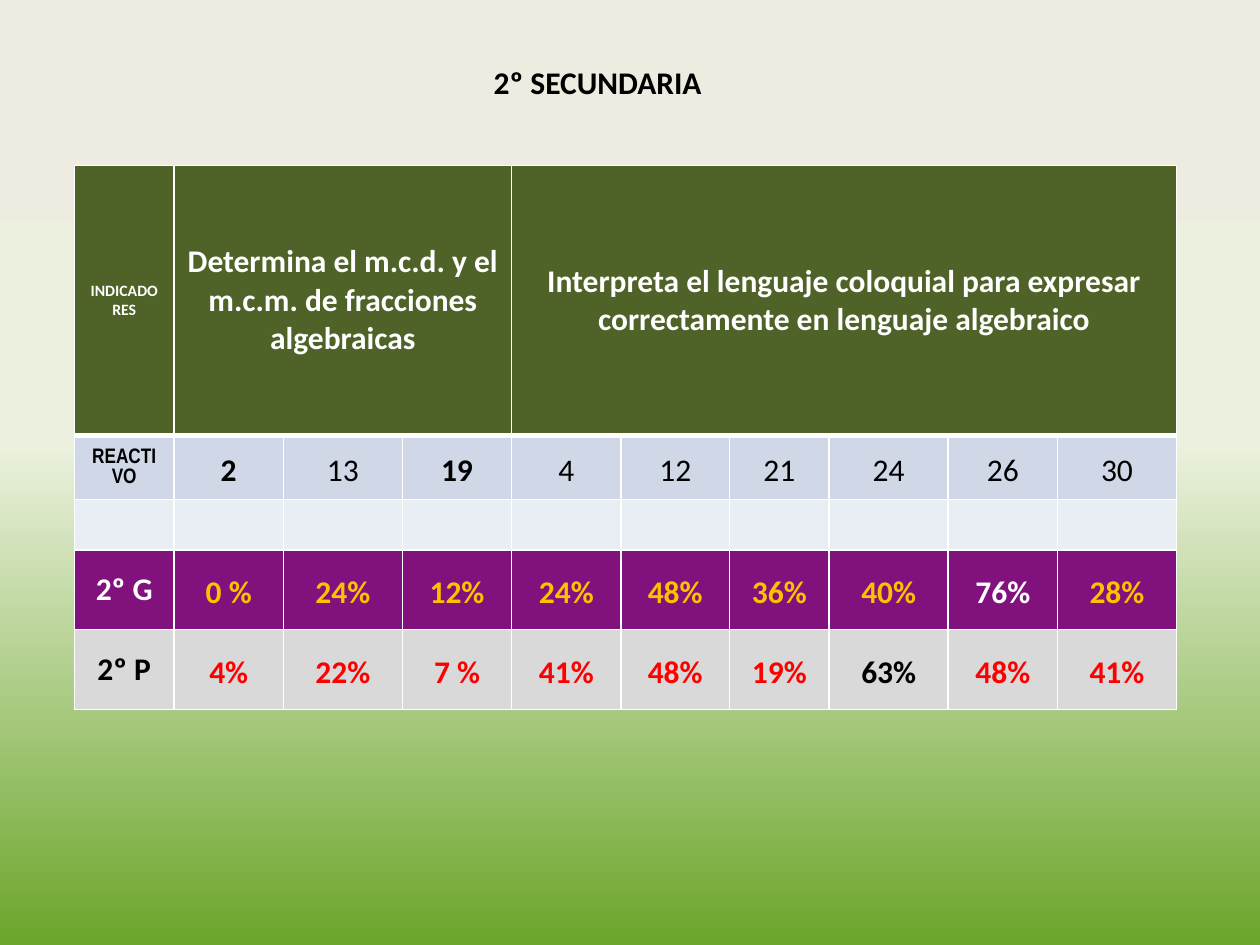
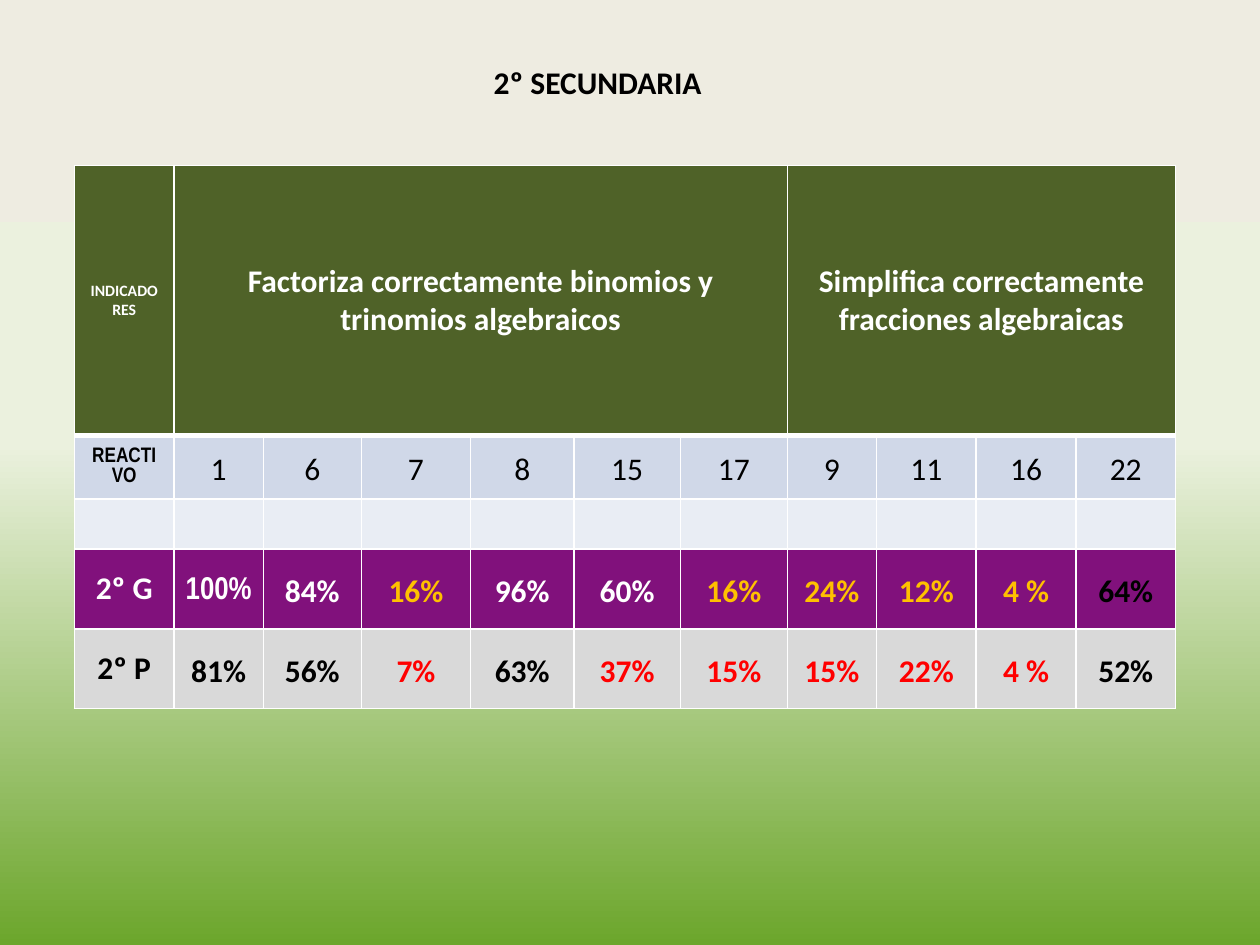
from lxml.etree import SubElement
from pptx import Presentation
from pptx.dml.color import RGBColor
from pptx.enum.text import MSO_ANCHOR, MSO_AUTO_SIZE, PP_ALIGN
from pptx.oxml import parse_xml
from pptx.oxml.ns import qn
from pptx.util import Pt

TITLE = " 2º SECUNDARIA"
LABELS = ["INDICADORES", "REACTIVO", "", "2º G", "2º P"]
SLIDES = [
    {
        "indicators": [
            ("Determina el m.c.d. y el m.c.m. de fracciones algebraicas", 3),
            ("Interpreta el lenguaje coloquial para expresar correctamente "
             "en lenguaje algebraico", 6),
        ],
        "items": ["2", "13", "19", "4", "12", "21", "24", "26", "30"],
        "bold_items": ["2", "19"],
        "group_g": ["0 %", "24%", "12%", "24%", "48%", "36%", "40%", "76%", "28%"],
        "group_p": ["4%", "22%", "7 %", "41%", "48%", "19%", "63%", "48%", "41%"],
        "widths": [57, 62.5, 68, 62.5, 62.5, 62, 57, 68, 62.5, 68],
        "item_height": 36.5,
    },
    {
        "indicators": [
            ("Factoriza correctamente binomios y trinomios algebraicos", 6),
            ("Simplifica correctamente fracciones algebraicas", 4),
        ],
        "items": ["1", "6", "7", "8", "15", "17", "9", "11", "16", "22"],
        "bold_items": [],
        "group_g": ["100%", "84%", "16%", "96%", "60%", "16%", "24%", "12%", "4 %", "64%"],
        "group_p": ["81%", "56%", "7%", "63%", "37%", "15%", "15%", "22%", "4 %", "52%"],
        "widths": [57, 51, 56, 62.5, 59, 61, 61, 51, 57, 57, 57],
        "item_height": 32.5,
    },
]
WHITE, BLACK, RED, AMBER = "FFFFFF", "000000", "FF0000", "FFC000"
ROW_FILLS = ["4F6228", "D0D8E8", "E9EDF4", "81117C", "D9D9D9"]
BACKGROUND_STOPS = [(0, "6CA62C"), (53, "EBF1DE"), (100, "EEECE1")]
TABLE_LEFT, TABLE_TOP = 42.5, 94.5
PASS_MARK = 50
HEADER_ROW, ITEM_ROW, EMPTY_ROW, G_ROW, P_ROW = range(5)


def color(value):
    return RGBColor.from_string(value)


def set_background(master):
    fill = master.background.fill
    fill.gradient()
    fill.gradient_angle = 90
    stops = fill.gradient_stops[0]._gs.getparent()
    for stop in list(stops):
        stops.remove(stop)
    for position, value in BACKGROUND_STOPS:
        stop = SubElement(stops, qn("a:gs"), pos=str(position * 1000))
        SubElement(stop, qn("a:srgbClr"), val=value)


def format_text(frame, size=18, ink=BLACK, bold=True, font="Calibri", spacing=None):
    for para in frame.paragraphs:
        para.alignment = PP_ALIGN.CENTER
        para.line_spacing = spacing
        for span in para.runs:
            span.font.name = font
            span.font.size = Pt(size)
            span.font.bold = bold
            span.font.color.rgb = color(ink)


def add_title(page):
    title = page.shapes.title
    title.left, title.top, title.width, title.height = Pt(270), Pt(32), Pt(139), Pt(29)
    frame = title.text_frame
    frame.text = TITLE
    frame.word_wrap = False
    frame.auto_size = MSO_AUTO_SIZE.SHAPE_TO_FIT_TEXT
    frame.vertical_anchor = MSO_ANCHOR.MIDDLE
    format_text(frame)


def set_borders(cell, row):
    widths = {"L": 1, "R": 1, "T": 3 if row == ITEM_ROW else 1,
              "B": 3 if row == HEADER_ROW else 1}
    properties = cell._tc.get_or_add_tcPr()
    for index, (side, width) in enumerate(widths.items()):
        properties.insert(index, parse_xml(
            f'<a:ln{side} xmlns:a="http://schemas.openxmlformats.org/drawingml/2006/main" '
            f'w="{Pt(width)}"><a:solidFill><a:srgbClr val="{WHITE}"/></a:solidFill>'
            f'</a:ln{side}>'))


def score_color(text, row):
    """Choose the ink that tells passed scores from failed ones."""
    passed = int(text.strip("% ")) >= PASS_MARK
    if row == P_ROW:
        return BLACK if passed else RED
    if text == "64%":
        return BLACK
    return WHITE if passed else AMBER


def text_style(text, row, column, bold_items):
    if row == HEADER_ROW:
        return {"ink": WHITE, "size": 18 if column else 9}
    if column == 0:
        if row == ITEM_ROW:
            return {"size": 12, "font": "Arial Narrow"}
        return {"ink": WHITE if row == G_ROW else BLACK}
    if row == ITEM_ROW:
        return {"bold": text in bold_items, "spacing": 1.15}
    return {"ink": score_color(text, row), "spacing": 1.15,
            "font": "Arial Narrow" if text == "100%" else "Calibri"}


def fill_cell(cell, text, row, column, bold_items):
    cell.fill.solid()
    cell.fill.fore_color.rgb = color(ROW_FILLS[row])
    set_borders(cell, row)
    if not text:
        return
    cell.vertical_anchor = MSO_ANCHOR.MIDDLE
    if row > HEADER_ROW and column:
        cell.margin_left = cell.margin_right = Pt(5)
        cell.margin_top = cell.margin_bottom = 0
    cell.text_frame.text = text
    format_text(cell.text_frame, **text_style(text, row, column, bold_items))


def add_scores(page, content):
    widths = content["widths"]
    heights = [154.5, content["item_height"], 28.5, 45.5, 45.5]
    count = len(content["items"])
    header = []
    for text, span in content["indicators"]:
        header += [text] + [""] * (span - 1)
    rows = [header, content["items"], [""] * count, content["group_g"], content["group_p"]]

    frame = page.shapes.add_table(len(rows), count + 1, Pt(TABLE_LEFT), Pt(TABLE_TOP),
                                  Pt(sum(widths)), Pt(sum(heights)))
    table = frame.table
    table.first_row = table.horz_banding = False
    for column, width in zip(table.columns, widths):
        column.width = Pt(width)
    for row, height in zip(table.rows, heights):
        row.height = Pt(height)
    for row, (label, values) in enumerate(zip(LABELS, rows)):
        for column, text in enumerate([label] + values):
            fill_cell(table.cell(row, column), text, row, column, content["bold_items"])

    table.cell(HEADER_ROW, 0)._tc.get_or_add_tcPr().set("vert", "wordArtVert")
    start = 1
    for _, span in content["indicators"]:
        table.cell(HEADER_ROW, start).merge(table.cell(HEADER_ROW, start + span - 1))
        start += span


def main():
    deck = Presentation()
    deck.slide_width, deck.slide_height = Pt(720), Pt(540)
    set_background(deck.slide_master)
    for content in SLIDES:
        page = deck.slides.add_slide(deck.slide_layouts[5])
        add_title(page)
        add_scores(page, content)
    deck.save("out.pptx")


if __name__ == "__main__":
    main()
